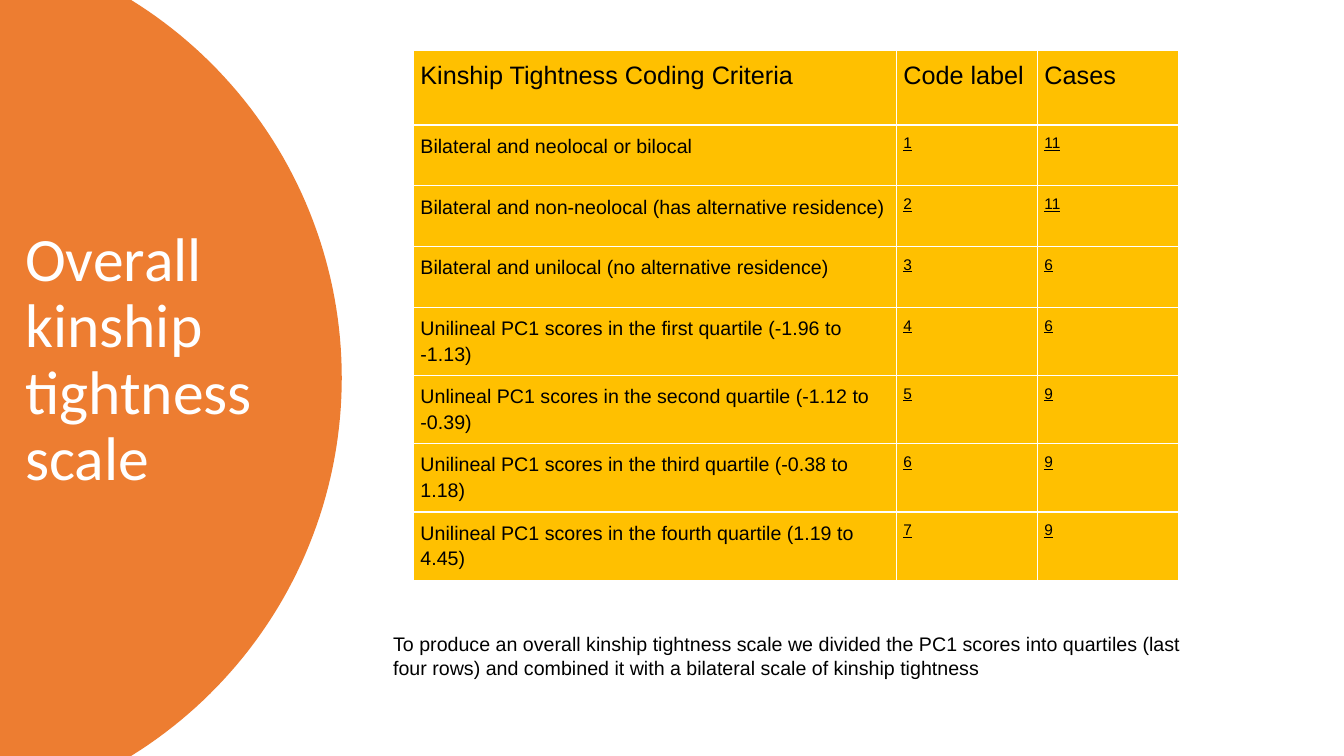
import math
from dataclasses import dataclass

import lxml.etree
import pptx
import pptx.dml.color
import pptx.enum.text
import pptx.oxml.ns
import pptx.util

SLIDE_WIDTH = pptx.util.Inches(13.33)
SLIDE_HEIGHT = pptx.util.Inches(7.5)


@dataclass(frozen=True)
class Theme:
    disc: str = "ED7D31"
    cell: str = "FFC000"
    light: str = "FFFFFF"
    dark: str = "000000"
    title_font: str = "Calibri"
    body_font: str = "Arial"
    title_size: int = 44
    header_size: int = 18
    body_size: int = 14
    code_size: int = 11


THEME = Theme()

HEADER = ("Kinship Tightness Coding Criteria", "Code label", "Cases")
CRITERIA = (
    ("Bilateral and neolocal or bilocal", 11),
    ("Bilateral and non-neolocal (has alternative residence)", 11),
    ("Bilateral and unilocal (no alternative residence)", 6),
    ("Unilineal PC1 scores in the first quartile (-1.96 to -1.13)", 6),
    ("Unlineal PC1 scores in the second quartile (-1.12 to -0.39)", 9),
    ("Unilineal PC1 scores in the third quartile (-0.38 to 1.18)", 9),
    ("Unilineal PC1 scores in the fourth quartile (1.19 to 4.45)", 9),
)
COLUMN_SHARES = (35.93, 10.5, 10.5)
ROW_SHARES = (9.87,) + (8.05,) * 3 + (8.73,) * 4
NOTE = (
    "To produce an overall kinship tightness scale we divided the PC1 scores "
    "into quartiles (last four rows) and combined it with a bilateral scale "
    "of kinship tightness"
)


def across(percent):
    return round(SLIDE_WIDTH * percent / 100)


def down(percent):
    return round(SLIDE_HEIGHT * percent / 100)


def color(code):
    return pptx.dml.color.RGBColor.from_string(code)


def style(paragraph, font_name, size, code, spacing=1.0, underline=False):
    font = paragraph.font
    font.name = font_name
    font.size = pptx.util.Pt(size)
    font.color.rgb = color(code)
    if underline:
        font.underline = True
    paragraph.line_spacing = spacing


def add_disc(slide, left, right, radius):
    """Draw a disc cut off by the slide's top, bottom and the given left edge."""
    arc_radius = across(radius)
    center_x = across(right) - arc_radius
    center_y = SLIDE_HEIGHT / 2
    half_angle = math.asin(center_y / arc_radius)
    steps = 90
    angles = [half_angle * (2 * step / steps - 1) for step in range(steps + 1)]
    arc = [
        (round(center_x + arc_radius * math.cos(angle)),
         round(center_y + arc_radius * math.sin(angle)))
        for angle in angles
    ]
    builder = slide.shapes.build_freeform(across(left), 0)
    builder.add_line_segments(arc + [(across(left), SLIDE_HEIGHT)], close=True)
    disc = builder.convert_to_shape()
    disc.shadow.inherit = False
    disc.fill.solid()
    disc.fill.fore_color.rgb = color(THEME.disc)
    disc.line.fill.background()


def add_text(slide, text, left, top, width, height, anchor):
    box = slide.shapes.add_textbox(across(left), down(top), across(width), down(height))
    frame = box.text_frame
    frame.word_wrap = True
    frame.vertical_anchor = anchor
    paragraph = frame.paragraphs[0]
    paragraph.text = text
    return paragraph


def add_borders(cell):
    properties = cell._tc.get_or_add_tcPr()
    for side in ("lnL", "lnR", "lnT", "lnB"):
        line = lxml.etree.SubElement(
            properties, pptx.oxml.ns.qn(f"a:{side}"), w=str(pptx.util.Pt(1)))
        fill = lxml.etree.SubElement(line, pptx.oxml.ns.qn("a:solidFill"))
        lxml.etree.SubElement(fill, pptx.oxml.ns.qn("a:srgbClr"), val=THEME.light)


def fill_cell(cell, text, size, underline):
    add_borders(cell)
    cell.fill.solid()
    cell.fill.fore_color.rgb = color(THEME.cell)
    inset = pptx.util.Inches(0.07)
    cell.margin_left = cell.margin_right = inset
    cell.margin_top = cell.margin_bottom = inset
    cell.text = str(text)
    style(cell.text_frame.paragraphs[0], THEME.body_font, size, THEME.dark,
          spacing=1.15, underline=underline)


def add_criteria_table(slide, left, top):
    rows = [HEADER] + [
        (criterion, code, cases)
        for code, (criterion, cases) in enumerate(CRITERIA, start=1)
    ]
    table = slide.shapes.add_table(
        len(rows), len(HEADER), across(left), down(top),
        across(sum(COLUMN_SHARES)), down(sum(ROW_SHARES))).table
    table.first_row = False
    table.horz_banding = False
    for column, share in zip(table.columns, COLUMN_SHARES):
        column.width = across(share)
    for row, share in zip(table.rows, ROW_SHARES):
        row.height = down(share)
    for row_index, values in enumerate(rows):
        for column_index, value in enumerate(values):
            is_code = row_index > 0 and column_index > 0
            if row_index == 0:
                size = THEME.header_size
            else:
                size = THEME.code_size if is_code else THEME.body_size
            fill_cell(table.cell(row_index, column_index), value, size, is_code)


def main():
    presentation = pptx.Presentation()
    presentation.slide_width = SLIDE_WIDTH
    presentation.slide_height = SLIDE_HEIGHT
    slide = presentation.slides.add_slide(presentation.slide_layouts[6])

    add_disc(slide, left=-8.78, right=25.43, radius=33.08)
    title = add_text(slide, "Overall\vkinship tightness scale", 1.13, 15.2, 26.26, 65.07,
                     pptx.enum.text.MSO_ANCHOR.MIDDLE)
    style(title, THEME.title_font, THEME.title_size, THEME.light, spacing=0.9)
    add_criteria_table(slide, left=30.76, top=6.67)
    note = add_text(slide, NOTE, 28.51, 82.93, 60.39, 7.6,
                    pptx.enum.text.MSO_ANCHOR.TOP)
    style(note, THEME.body_font, THEME.body_size, THEME.dark)

    presentation.save("out.pptx")


if __name__ == "__main__":
    main()
